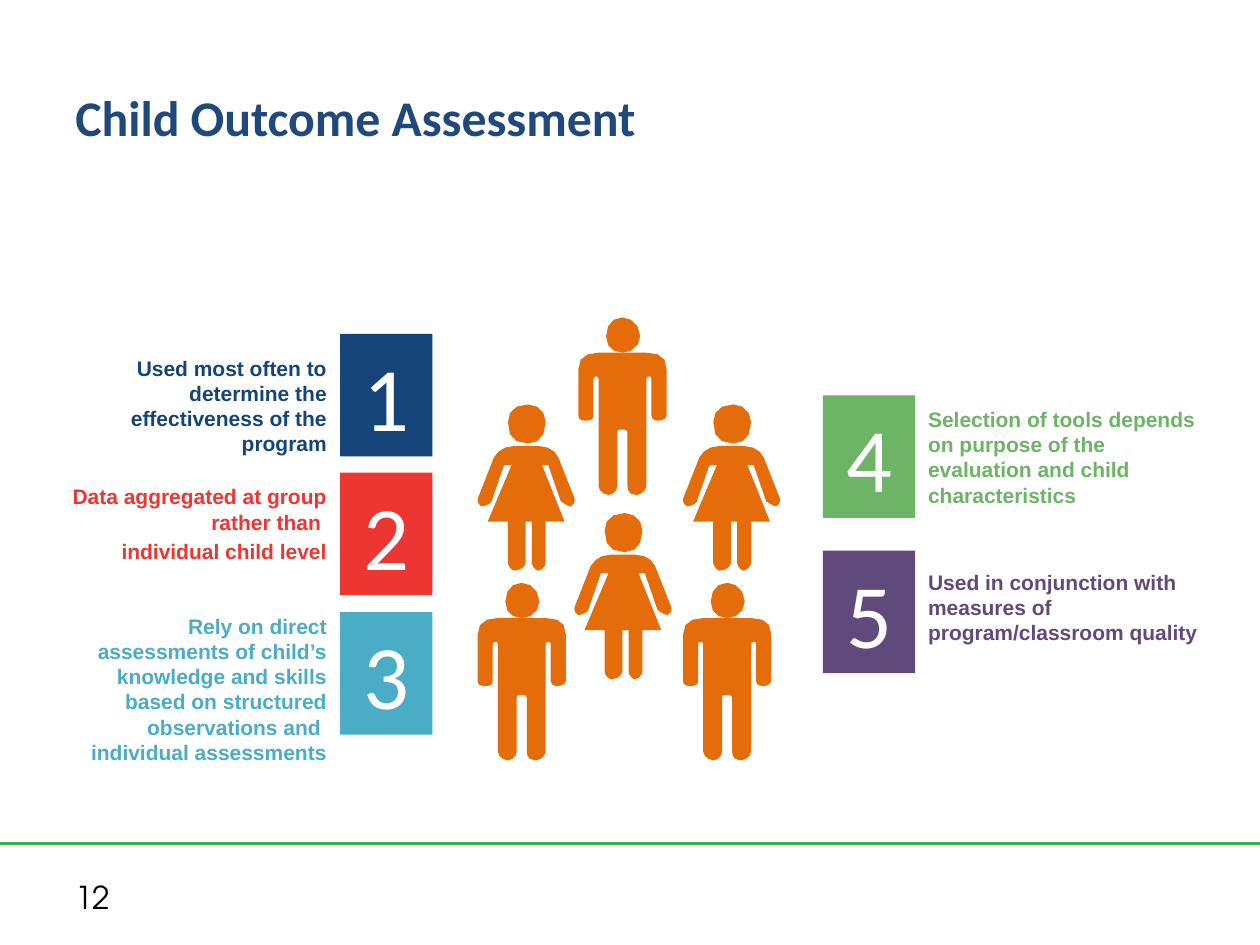
import pptx
import pptx.util
import pptx.dml.color
import pptx.enum.shapes
import pptx.enum.text
import pptx.oxml
import pptx.oxml.ns

Cm = pptx.util.Cm
Pt = pptx.util.Pt
ALIGN = pptx.enum.text.PP_ALIGN
ANCHOR = pptx.enum.text.MSO_ANCHOR

COLORS = {
    "title": "1F497D", "navy": "154578", "red": "ED3532", "teal": "4BACC6",
    "green": "6DB467", "purple": "604A7B", "people": "E46C0A",
    "rule": "39B54A", "white": "FFFFFF", "black": "000000",
}

LEFT = {"tile_x": 6.86, "label_x": 0.77, "align": ALIGN.RIGHT}
RIGHT = {"tile_x": 16.59, "label_x": 18.46, "align": ALIGN.LEFT}
TILE_W, TILE_H = 1.86, 2.47
LABEL_W = 6.07

POINTS = [
    (LEFT, 6.73, 7.04, 1.85, "navy",
     ["Used most often to determine the effectiveness of the program"]),
    (LEFT, 9.53, 9.63, 1.88, "red",
     ["Data aggregated at group rather than ", "individual child level"]),
    (LEFT, 12.34, 12.24, 2.67, "teal",
     ["Rely on direct assessments of child’s knowledge and skills based on "
      "structured observations and \vindividual assessments"]),
    (RIGHT, 7.97, 8.07, 2.29, "green",
     ["Selection of tools depends on purpose of the evaluation and child characteristics"]),
    (RIGHT, 11.1, 11.35, 1.88, "purple",
     ["Used in conjunction with measures of program/classroom quality"]),
]

UNIT = Cm(2.54) / 100
MAN = [
    [(54, 0), (16, 0), (6, 0, 0, 4, 0, 13), (0, 50), (0, 53, 2, 54, 6, 54),
     (10, 54, 12, 53, 12, 50), (12, 21), (12, 19, 14, 19, 14, 19),
     (15, 19, 16, 19, 16, 21), (16, 106), (16, 109, 20, 113, 24, 113),
     (28, 113, 31, 109, 31, 106), (31, 63), (31, 61, 32, 61, 35, 61),
     (36, 61, 39, 61, 39, 63), (39, 106), (39, 109, 40, 113, 46, 113),
     (50, 113, 54, 109, 54, 106), (54, 21), (54, 19, 55, 19, 57, 19),
     (57, 19, 58, 19, 58, 21), (58, 50), (58, 53, 61, 54, 63, 54),
     (66, 54, 70, 53, 70, 50), (70, 13), (70, 4, 65, 0, 54, 0)],
    [(35, -28), (27, -28, 22, -22, 22, -13), (22, -5, 27, 0, 35, 0),
     (42, 0, 49, -5, 49, -13), (49, -22, 42, -28, 35, -28)],
]
WOMAN = [
    [(77, 42), (64, 9), (62, 4, 56, 0, 48, 0), (29, 0), (21, 0, 16, 4, 13, 9),
     (0, 42), (0, 44, 0, 46, 3, 48), (5, 48, 11, 46, 11, 44), (21, 15), (27, 15),
     (8, 60), (24, 60), (24, 93), (24, 95, 27, 99, 29, 99),
     (35, 99, 38, 95, 38, 93), (38, 60), (43, 60), (43, 93),
     (43, 95, 46, 99, 48, 99), (51, 99, 54, 95, 54, 93), (54, 60), (69, 60),
     (51, 15), (56, 15), (66, 44), (69, 46, 72, 48, 74, 48),
     (77, 46, 77, 44, 77, 42)],
    [(40, -2), (48, -2, 54, -7, 54, -19), (54, -27, 48, -33, 40, -33),
     (29, -33, 24, -27, 24, -19), (24, -7, 29, -2, 40, -2)],
]
PEOPLE = [
    (WOMAN, 11.58, 11.18), (WOMAN, 9.63, 8.99), (MAN, 11.66, 7.11),
    (MAN, 9.63, 12.46), (WOMAN, 13.77, 8.99), (MAN, 13.77, 12.46),
]


def rgb(name):
    return pptx.dml.color.RGBColor.from_string(COLORS[name])


def write(sp, paragraphs, size, color, font="Calibri", bold=False,
          align=ALIGN.LEFT, anchor=ANCHOR.TOP, before=0):
    tf = sp.text_frame
    tf.word_wrap = True
    tf.vertical_anchor = anchor
    for i, text in enumerate(paragraphs):
        p = tf.paragraphs[0] if i == 0 else tf.add_paragraph()
        p.text = text
        p.alignment = align
        if i:
            p.space_before = Pt(before)
        for r in p.runs:
            r.font.name, r.font.size, r.font.bold = font, Pt(size), bold
            r.font.color.rgb = rgb(color)


def text_box(s, x, y, w, h, paragraphs, **style):
    write(s.shapes.add_textbox(Cm(x), Cm(y), Cm(w), Cm(h)), paragraphs, **style)


def paint(sp, color):
    sp.shadow.inherit = False
    sp.fill.solid()
    sp.fill.fore_color.rgb = rgb(color)
    sp.line.fill.background()


def flatten(outline, steps=3):
    points = [outline[0]]
    for seg in outline[1:]:
        if len(seg) == 2:
            points.append(seg)
            continue
        x0, y0 = points[-1]
        x1, y1, x2, y2, x3, y3 = seg
        for k in range(1, steps + 1):
            t = k / steps
            a, b, c, d = (1 - t) ** 3, 3 * t * (1 - t) ** 2, 3 * t * t * (1 - t), t ** 3
            points.append((a * x0 + b * x1 + c * x2 + d * x3,
                           a * y0 + b * y1 + c * y2 + d * y3))
    return [(x * UNIT, y * UNIT) for x, y in points]


def add_person(s, figure, x, y):
    for outline in figure:
        points = flatten(outline)
        builder = s.shapes.build_freeform(*points[0])
        builder.add_line_segments(points[1:-1], close=True)
        paint(builder.convert_to_shape(Cm(x), Cm(y)), "people")


def main():
    prs = pptx.Presentation()
    prs.slide_width, prs.slide_height = Cm(25.4), Cm(19.05)
    s = prs.slides.add_slide(prs.slide_layouts[6])

    rule = s.shapes.add_connector(pptx.enum.shapes.MSO_CONNECTOR.STRAIGHT,
                                  0, Cm(17), prs.slide_width, Cm(17))
    rule.line.color.rgb = rgb("rule")
    rule.line.width = Pt(1.5)
    rule._element.spPr.append(pptx.oxml.parse_xml(
        "<a:effectLst %s/>" % pptx.oxml.ns.nsdecls("a")))

    text_box(s, 1.27, 17.58, 5.92, 1.02, ["12"], size=18, color="black",
             font="TeX Gyre Adventor")
    text_box(s, 1.27, 0.76, 22.86, 3.18, ["Child Outcome Assessment"], size=28.5,
             color="title", bold=True, anchor=ANCHOR.MIDDLE)

    for figure, x, y in PEOPLE:
        add_person(s, figure, x, y)

    for n, (side, tile_y, label_y, label_h, color, text) in enumerate(POINTS, 1):
        tile = s.shapes.add_shape(pptx.enum.shapes.MSO_SHAPE.RECTANGLE,
                                  Cm(side["tile_x"]), Cm(tile_y), Cm(TILE_W), Cm(TILE_H))
        paint(tile, color)
        write(tile, [str(n)], size=51.8, color="white", align=ALIGN.CENTER,
              anchor=ANCHOR.MIDDLE)
        text_box(s, side["label_x"], label_y, LABEL_W, label_h, text, size=12,
                 color=color, font="Arial", bold=True, align=side["align"],
                 before=2.4)

    prs.save("out.pptx")


if __name__ == "__main__":
    main()
